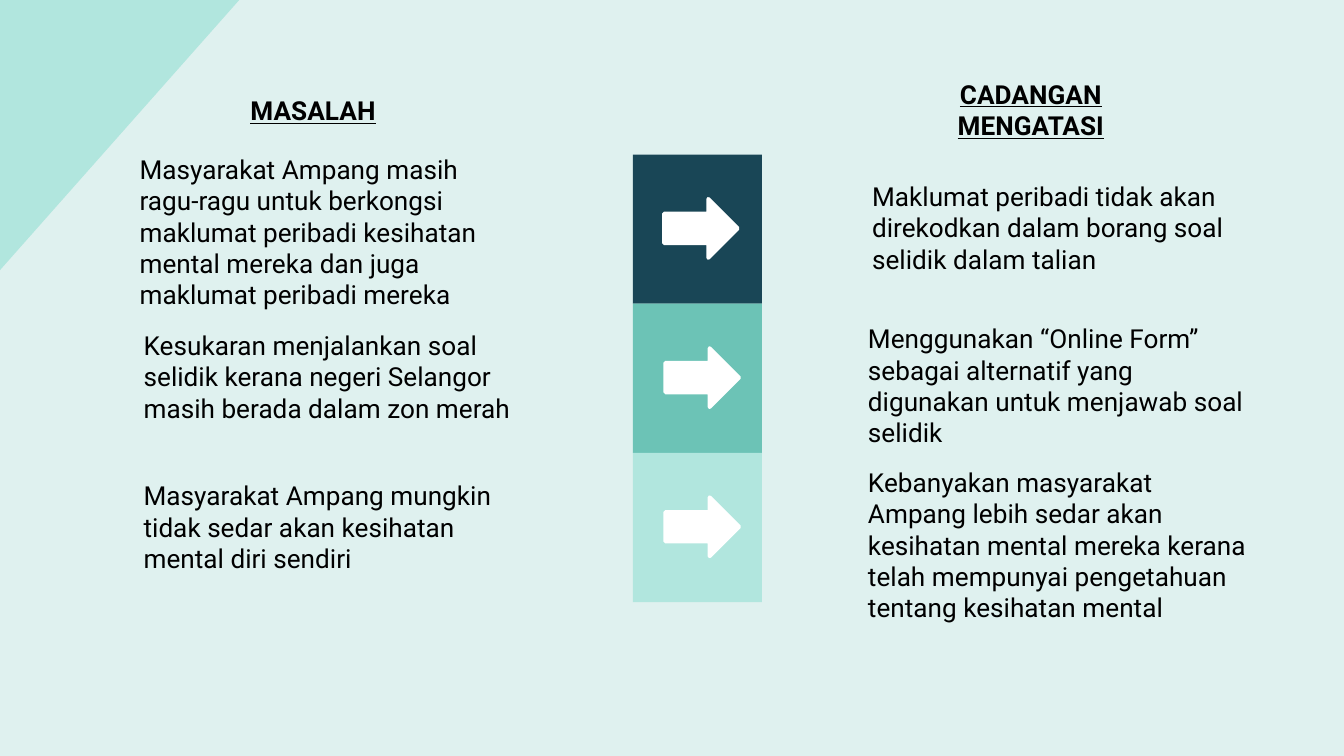
from pptx import Presentation
from pptx.dml.color import RGBColor
from pptx.enum.shapes import MSO_SHAPE
from pptx.enum.text import MSO_ANCHOR, PP_ALIGN
from pptx.util import Inches, Pt

RECTANGLE, ARROW = MSO_SHAPE.RECTANGLE, MSO_SHAPE.RIGHT_ARROW
TOP, MIDDLE = MSO_ANCHOR.TOP, MSO_ANCHOR.MIDDLE
LEFT, CENTER = PP_ALIGN.LEFT, PP_ALIGN.CENTER

THEME = {
    "font": "Roboto", "size": 14, "text": "000000", "arrow": "FFFFFF",
    "background": "DFF1EF", "corner": "B1E6DE",
    "steps": ["194656", "6CC3B6", "B1E6DE"],
}

HEADINGS = [
    ("MASALAH", (1.6, 0.62, 1.46, 0.4)),
    ("CADANGAN MENGATASI", (6.94, 0.55, 1.46, 0.53)),
]
PROBLEMS = [
    ("Masyarakat Ampang masih ragu-ragu untuk berkongsi maklumat peribadi "
     "kesihatan mental mereka dan juga maklumat peribadi mereka", -0.03, -0.11, 1.31),
    ("Kesukaran menjalankan soal selidik kerana negeri Selangor masih berada "
     "dalam zon merah", 0, 0.09, 0.9),
    ("Masyarakat Ampang mungkin tidak sedar akan kesihatan mental diri sendiri",
     0, 0.1, 0.9),
]
SOLUTIONS = [
    ("Maklumat peribadi tidak akan direkodkan dalam borang soal selidik dalam talian",
     0.03, 0.09, 0.9),
    ("Menggunakan “Online Form” sebagai alternatif yang digunakan untuk menjawab "
     "soal selidik", 0, 0.04, 1.02),
    ("Kebanyakan masyarakat Ampang lebih sedar akan kesihatan mental mereka kerana "
     "telah mempunyai pengetahuan tentang kesihatan mental", 0, 0, 1.33),
]

SLIDE_W = 10
SLIDE_H = SLIDE_W * 9 / 16
CORNER_W, CORNER_H = 1.78, 2.01
STEP_X, STEP_Y, STEP_W, STEP_H = 4.71, 1.15, 0.96, 1.11
ARROW_LEFTS, ARROW_DROP, ARROW_W, ARROW_H = (4.94, 4.95, 4.95), 0.33, 0.55, 0.44
PROBLEM_X, SOLUTION_X, COLUMN_W = 0.97, 6.36, 3.05


def rgb(code):
    return RGBColor.from_string(code)


def paint(shape, color, outline=None):
    shape.shadow.inherit = False
    shape.fill.solid()
    shape.fill.fore_color.rgb = rgb(color)
    if outline:
        shape.line.color.rgb = rgb(color)
        shape.line.width = Pt(outline)
    else:
        shape.line.fill.background()


def add_block(slide, kind, box, color, outline=None):
    paint(slide.shapes.add_shape(kind, *map(Inches, box)), color, outline)


def add_text(slide, text, box, align=LEFT, anchor=TOP, heading=False, space_after=0):
    frame = slide.shapes.add_textbox(*map(Inches, box)).text_frame
    frame.word_wrap = True
    frame.vertical_anchor = anchor
    frame.margin_left = frame.margin_right = Inches(0.1)
    frame.margin_top = frame.margin_bottom = Inches(0.1)
    paragraph = frame.paragraphs[0]
    paragraph.alignment = align
    paragraph.space_after = Pt(space_after)
    run = paragraph.add_run()
    run.text = text
    run.font.name = THEME["font"]
    run.font.size = Pt(THEME["size"])
    run.font.color.rgb = rgb(THEME["text"])
    run.font.bold = run.font.underline = heading


def main():
    deck = Presentation()
    deck.slide_width, deck.slide_height = Inches(SLIDE_W), Inches(SLIDE_H)
    slide = deck.slides.add_slide(deck.slide_layouts[6])
    slide.background.fill.solid()
    slide.background.fill.fore_color.rgb = rgb(THEME["background"])

    corner = slide.shapes.build_freeform(0, 0)
    corner.add_line_segments([(0, Inches(CORNER_H)), (Inches(CORNER_W), 0)], close=True)
    paint(corner.convert_to_shape(), THEME["corner"])

    for heading, box in HEADINGS:
        add_text(slide, heading, box, align=CENTER, anchor=MIDDLE, heading=True)

    for row, color in enumerate(THEME["steps"]):
        top = STEP_Y + row * STEP_H
        add_block(slide, RECTANGLE, (STEP_X, top, STEP_W, STEP_H), color)
        add_block(slide, ARROW, (ARROW_LEFTS[row], top + ARROW_DROP, ARROW_W, ARROW_H),
                  THEME["arrow"], outline=2)
        for left, column in ((PROBLEM_X, PROBLEMS), (SOLUTION_X, SOLUTIONS)):
            text, shift, drop, height = column[row]
            add_text(slide, text, (left + shift, top + drop, COLUMN_W, height),
                     space_after=8)

    deck.save("out.pptx")


if __name__ == "__main__":
    main()
